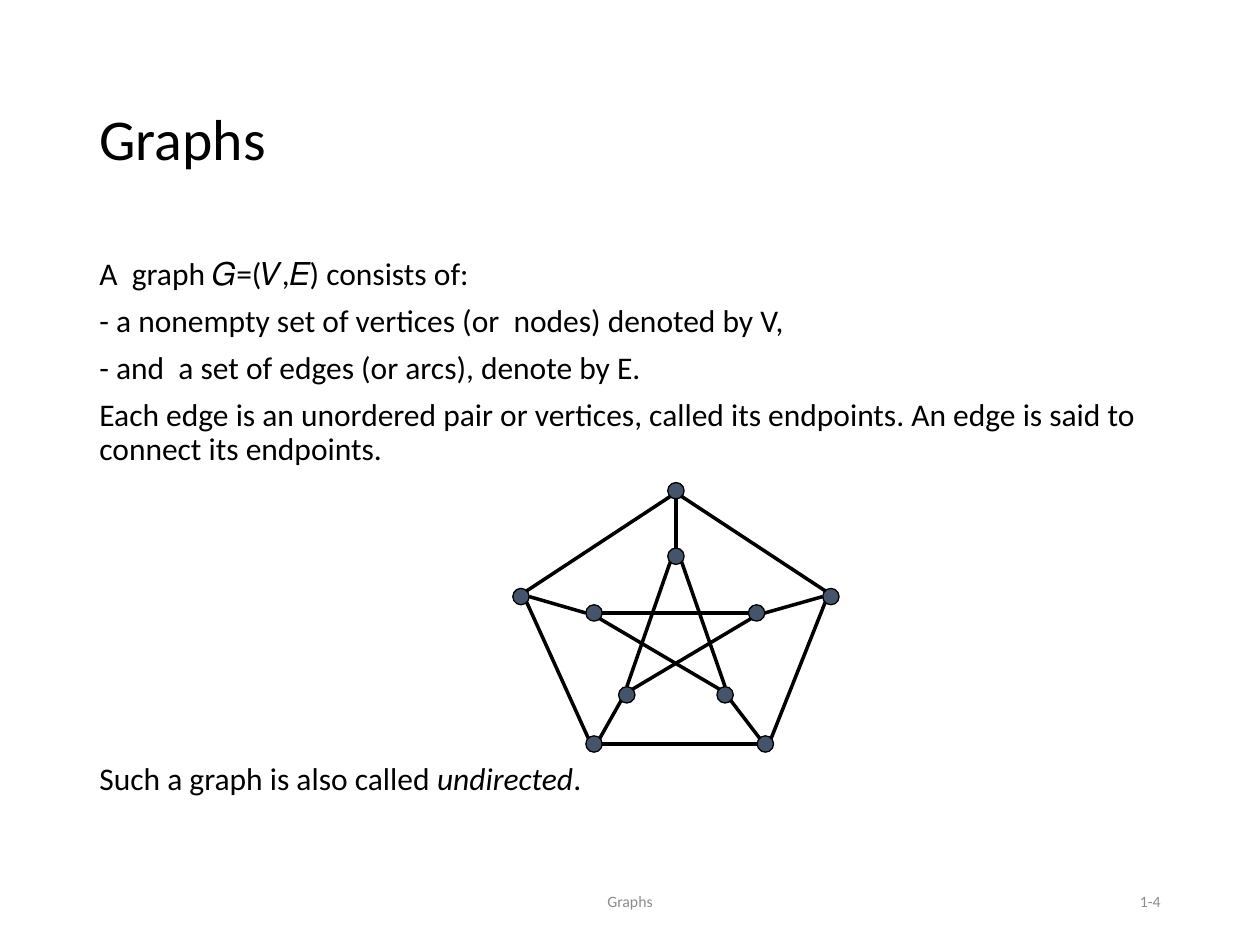
import pptx
import pptx.dml.color
import pptx.enum.shapes
import pptx.enum.text
import pptx.oxml
import pptx.util
from pptx.util import Inches

FONT = "Calibri"
BLACK = "000000"
GREY = "8C8C8C"
SLATE = "44546A"
DOT = 0.13
SITES = {"N": (0.5, 0), "NE": (0.85, 0.15), "E": (1, 0.5), "SE": (0.85, 0.85),
         "S": (0.5, 1), "SW": (0.15, 0.85), "W": (0, 0.5), "NW": (0.15, 0.15)}
VERTICES = {
    "top": (1.23, 0), "inner top": (1.23, 0.52),
    "left": (0, 0.84), "right": (2.46, 0.84),
    "low right": (1.94, 2.01), "low left": (0.58, 2.01),
    "inner right": (1.87, 0.97), "inner left": (0.58, 0.97),
    "inner low right": (1.62, 1.62), "inner low left": (0.84, 1.62),
}
EDGES = [
    ("left", "SE", "low left", "NW"),
    ("top", "SW", "left", "NE"),
    ("left", "E", "inner left", "W"),
    ("low right", "W", "low left", "E"),
    ("right", "SW", "low right", "NE"),
    ("top", "SE", "right", "NW"),
    ("inner low left", "SW", "low left", "NE"),
    ("top", "S", "inner top", "N"),
    ("inner top", "SE", "inner low right", "N"),
    ("right", "W", "inner right", "E"),
    ("inner low right", "SE", "low right", "NW"),
    ("inner left", "SE", "inner low right", "NW"),
    ("inner right", "W", "inner left", "E"),
    ("inner right", "SW", "inner low left", "NE"),
    ("inner top", "SW", "inner low left", "N"),
]
STATEMENTS = [
    "A  graph 𝐺=(𝑉,𝐸) consists of:",
    "- a nonempty set of vertices (or  nodes) denoted by V,",
    "- and  a set of edges (or arcs), denote by E.",
    "Each edge is an unordered pair or vertices, called its endpoints. "
    "An edge is said to connect its endpoints.",
]


def color(code):
    """Turn a hex string into a colour."""
    return pptx.dml.color.RGBColor.from_string(code)


def add_span(para, text, size, code=BLACK, italic=False):
    """Add one formatted run to a paragraph."""
    span = para.add_run()
    span.text = text
    span.font.name = FONT
    span.font.size = pptx.util.Pt(size)
    span.font.italic = italic
    span.font.color.rgb = color(code)


def add_title(page, left, top, width, height):
    """Place and fill the title placeholder."""
    title = page.shapes.title
    title.left, title.top = Inches(left), Inches(top)
    title.width, title.height = Inches(width), Inches(height)
    title.text_frame.vertical_anchor = pptx.enum.text.MSO_ANCHOR.MIDDLE
    para = title.text_frame.paragraphs[0]
    para.alignment = pptx.enum.text.PP_ALIGN.LEFT
    para.line_spacing = 0.9
    add_span(para, "Graphs", 33)


def add_text_box(page, left, top, width, height):
    """Add a wrapping text box and return its frame."""
    box = page.shapes.add_textbox(Inches(left), Inches(top), Inches(width), Inches(height))
    box.text_frame.word_wrap = True
    return box.text_frame


def add_definition(page, left, top, width, height):
    """Write the definition, leaving a gap for the drawing before its last line."""
    frame = add_text_box(page, left, top, width, height)
    lines = [[(text, False)] for text in STATEMENTS]
    lines.append([("Such a graph is also called ", False), ("undirected", True), (".", False)])
    for index, line in enumerate(lines):
        para = frame.add_paragraph() if index else frame.paragraphs[0]
        para.line_spacing = 0.9
        para.space_before = pptx.util.Pt(169 if index == len(lines) - 1 else 7.5)
        for text, italic in line:
            add_span(para, text, 18, italic=italic)


def add_footer(page, left, top, width, height, text, alignment):
    """Write one grey footer entry."""
    frame = add_text_box(page, left, top, width, height)
    frame.vertical_anchor = pptx.enum.text.MSO_ANCHOR.MIDDLE
    para = frame.paragraphs[0]
    para.alignment = alignment
    add_span(para, text, 9, GREY)


def add_graph(page, left, top):
    """Draw the vertices and edges as one group."""
    group = page.shapes.add_group_shape()

    def site(vertex, side):
        (x, y), (across, down) = VERTICES[vertex], SITES[side]
        return Inches(left + x + DOT * across), Inches(top + y + DOT * down)

    for x, y in VERTICES.values():
        dot = group.shapes.add_shape(pptx.enum.shapes.MSO_SHAPE.OVAL, Inches(left + x),
                                     Inches(top + y), Inches(DOT), Inches(DOT))
        dot.shadow.inherit = False
        dot.fill.solid()
        dot.fill.fore_color.rgb = color(SLATE)
        dot.line.color.rgb = color(BLACK)
        dot.line.width = pptx.util.Pt(0.75)
    for start, start_side, end, end_side in EDGES:
        edge = group.shapes.add_connector(pptx.enum.shapes.MSO_CONNECTOR.STRAIGHT,
                                          *site(start, start_side), *site(end, end_side))
        edge.line.color.rgb = color(BLACK)
        edge.line.width = pptx.util.Pt(2)
        properties = edge.element.spPr
        properties.append(properties.makeelement(pptx.oxml.ns.qn("a:effectLst"), {}))


def main():
    """Build and save the deck."""
    deck = pptx.Presentation()
    deck.slide_width, deck.slide_height = Inches(10), Inches(7.5)
    page = deck.slides.add_slide(deck.slide_layouts[5])
    add_title(page, 0.69, 0.4, 8.62, 1.45)
    add_definition(page, 0.69, 2, 8.62, 4.76)
    align = pptx.enum.text.PP_ALIGN
    add_footer(page, 3.31, 6.95, 3.38, 0.4, "Graphs", align.CENTER)
    add_footer(page, 7.06, 6.95, 2.25, 0.4, "1-4", align.RIGHT)
    add_graph(page, 4.07, 3.83)
    deck.save("out.pptx")


if __name__ == "__main__":
    main()
